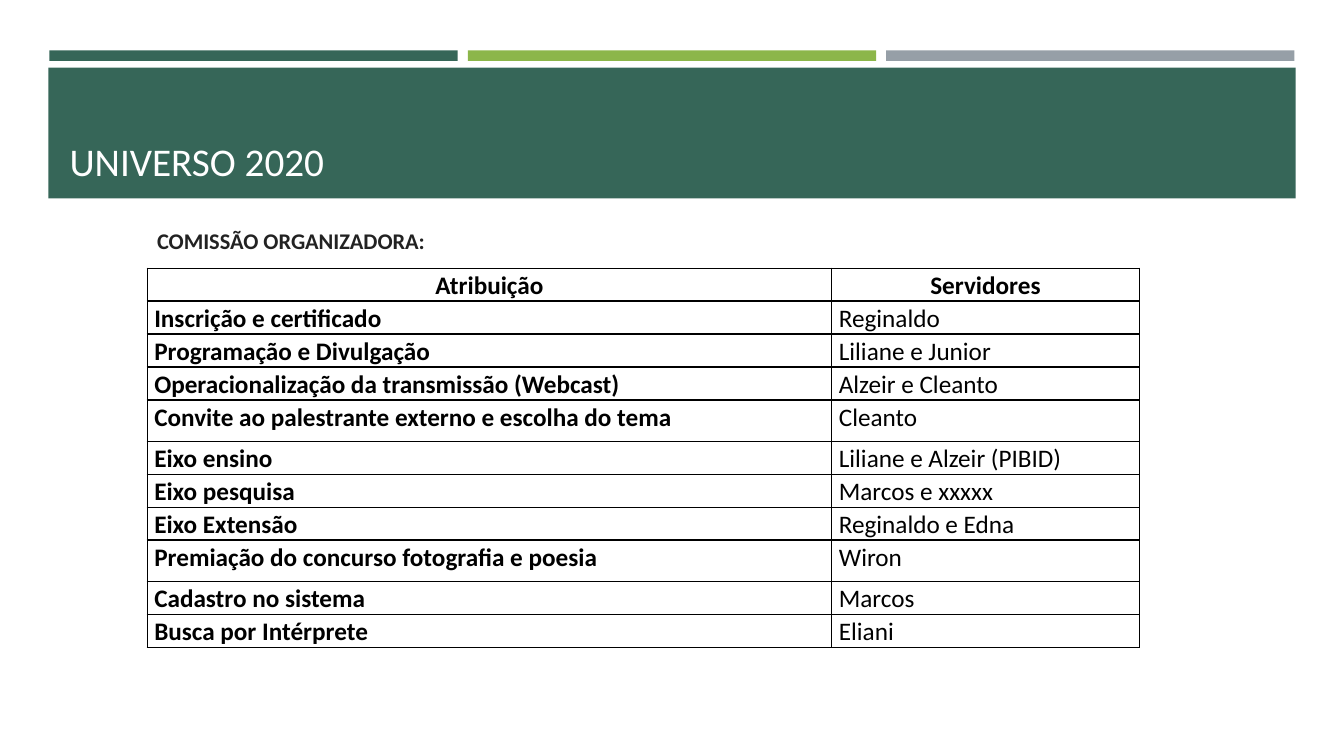
from dataclasses import dataclass

from lxml.etree import SubElement
from pptx import Presentation
from pptx.dml.color import RGBColor
from pptx.enum.shapes import MSO_SHAPE
from pptx.enum.text import MSO_ANCHOR, MSO_AUTO_SIZE, PP_ALIGN
from pptx.oxml.ns import qn
from pptx.slide import Slide
from pptx.table import _Cell
from pptx.text.text import _Paragraph
from pptx.util import Inches, Pt

WIDE, HIGH = Inches(13.33), Inches(7.5)
FONT = "Calibri"
GREEN, LIME, GREY = "366658", "8CB64A", "969FA7"
BLACK, WHITE, DARK = "000000", "FFFFFF", "222222"

# Shares of the slide's width and height, in percent
LEFT, TOP = 10.95, 35.47
COLS = (50.94, 22.88)
ROW, TALL = 4.13, 5.47
BAR, STEP = 30.38, 31.13


@dataclass
class Box:
    x: float
    y: float
    w: float
    h: float

    def place(self) -> tuple[int, int, int, int]:
        return across(self.x), down(self.y), across(self.w), down(self.h)


@dataclass
class Panel:
    box: Box
    fill: str


@dataclass
class Task:
    duty: str
    staff: str
    high: float = ROW


PANELS = [
    Panel(Box(3.68 + i * STEP, 6.67, BAR, 1.4), tone)
    for i, tone in enumerate((GREEN, LIME, GREY))
] + [Panel(Box(3.6, 8.93, 92.8, 17.33), GREEN)]

TASKS = [
    Task("Atribuição", "Servidores"),
    Task("Inscrição e certificado", "Reginaldo"),
    Task("Programação e Divulgação", "Liliane e Junior"),
    Task("Operacionalização da transmissão (Webcast)", "Alzeir e Cleanto"),
    Task("Convite ao palestrante externo e escolha do tema", "Cleanto", TALL),
    Task("Eixo ensino", "Liliane e Alzeir (PIBID)"),
    Task("Eixo pesquisa", "Marcos e xxxxx"),
    Task("Eixo Extensão", "Reginaldo e Edna"),
    Task("Premiação do concurso fotografia e poesia", "Wiron", TALL),
    Task("Cadastro no sistema", "Marcos"),
    Task("Busca por Intérprete", "Eliani"),
]


def across(share: float) -> int:
    return round(WIDE * share / 100)


def down(share: float) -> int:
    return round(HIGH * share / 100)


def color(code: str) -> RGBColor:
    return RGBColor.from_string(code)


def write(para: _Paragraph, text: str, size: int, tone: str, bold: bool = False) -> None:
    run = para.add_run()
    run.text = text
    run.font.name = FONT
    run.font.size = Pt(size)
    run.font.bold = bold
    run.font.color.rgb = color(tone)


def draw_panel(slide: Slide, panel: Panel) -> None:
    shape = slide.shapes.add_shape(MSO_SHAPE.RECTANGLE, *panel.box.place())
    shape.shadow.inherit = False
    shape.fill.solid()
    shape.fill.fore_color.rgb = color(panel.fill)
    shape.line.fill.background()


def draw_title(slide: Slide, box: Box, text: str) -> None:
    title = slide.shapes.title
    title.left, title.top, title.width, title.height = box.place()
    frame = title.text_frame
    frame.auto_size = MSO_AUTO_SIZE.NONE
    frame.vertical_anchor = MSO_ANCHOR.BOTTOM
    para = frame.paragraphs[0]
    para.alignment = PP_ALIGN.LEFT
    write(para, text, 28, WHITE)
    # Bring the title in front of the band
    slide.shapes._spTree.append(title._element)


def draw_note(slide: Slide, box: Box, text: str) -> None:
    frame = slide.shapes.add_textbox(*box.place()).text_frame
    frame.word_wrap = True
    frame.vertical_anchor = MSO_ANCHOR.MIDDLE
    write(frame.paragraphs[0], text, 16, DARK, True)


def rule_cell(cell: _Cell) -> None:
    """Clear the fill and draw a thin black line on all four sides."""
    cell.fill.background()
    props = cell._tc.get_or_add_tcPr()
    for spot, side in enumerate(("lnL", "lnR", "lnT", "lnB")):
        line = SubElement(props, qn(f"a:{side}"), w=str(Pt(1)))
        fill = SubElement(line, qn("a:solidFill"))
        SubElement(fill, qn("a:srgbClr"), val=BLACK)
        props.insert(spot, line)


def fill_cell(cell: _Cell, text: str, bold: bool, align: PP_ALIGN) -> None:
    cell.margin_left = cell.margin_right = across(0.53)
    cell.margin_top = cell.margin_bottom = 0
    rule_cell(cell)
    para = cell.text_frame.paragraphs[0]
    para.alignment = align
    para.line_spacing = 1.07
    write(para, text, 18, BLACK, bold)


def draw_table(slide: Slide, tasks: list[Task]) -> None:
    box = Box(LEFT, TOP, sum(COLS), sum(task.high for task in tasks))
    table = slide.shapes.add_table(len(tasks), len(COLS), *box.place()).table
    table.first_row = table.horz_banding = False
    for col, share in zip(table.columns, COLS):
        col.width = across(share)
    for i, task in enumerate(tasks):
        table.rows[i].height = down(task.high)
        head = i == 0
        align = PP_ALIGN.CENTER if head else PP_ALIGN.LEFT
        fill_cell(table.cell(i, 0), task.duty, True, align)
        fill_cell(table.cell(i, 1), task.staff, head, align)


def main() -> None:
    deck = Presentation()
    deck.slide_width, deck.slide_height = WIDE, HIGH
    slide = deck.slides.add_slide(deck.slide_layouts.get_by_name("Title Only"))
    for panel in PANELS:
        draw_panel(slide, panel)
    draw_table(slide, TASKS)
    draw_note(slide, Box(LEFT, 29.07, sum(COLS), 5.6), "COMISSÃO ORGANIZADORA:")
    draw_title(slide, Box(4.43, 10.27, 90.85, 14.8), "UNIVERSO 2020")
    deck.save("out.pptx")


if __name__ == "__main__":
    main()
